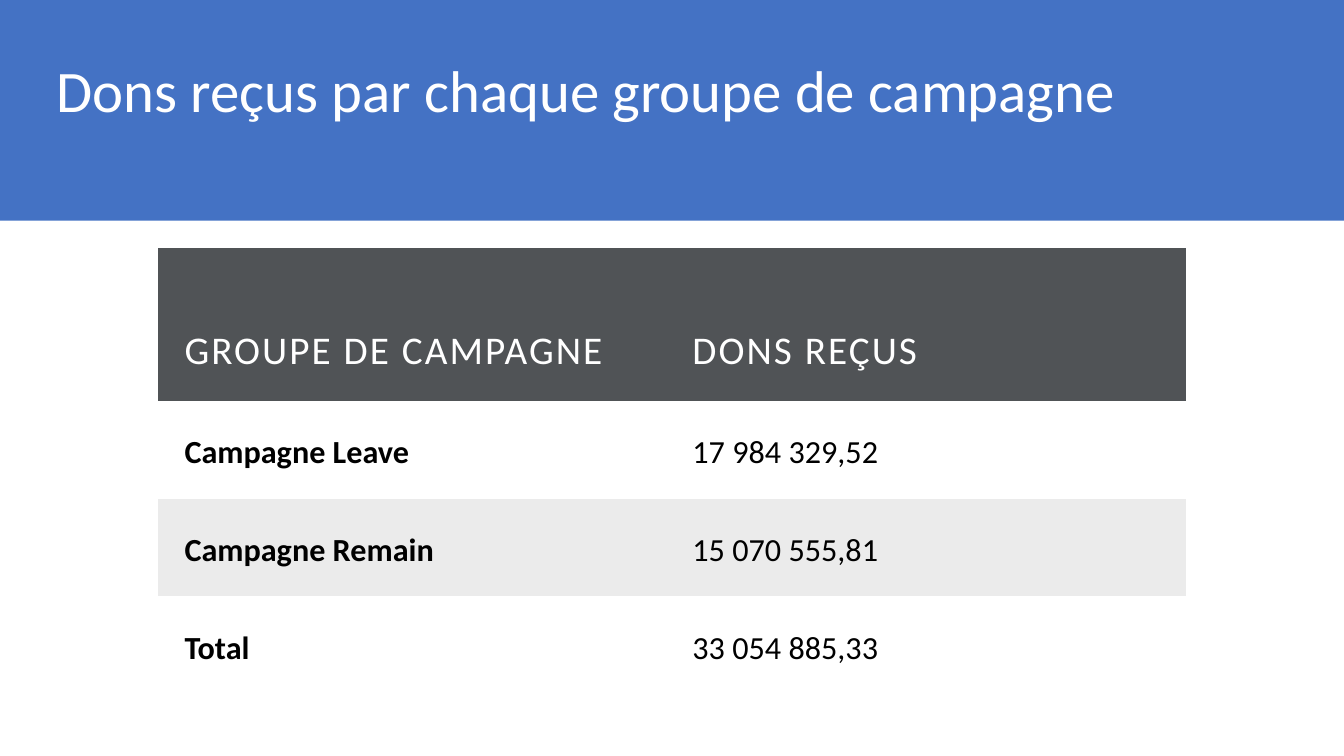
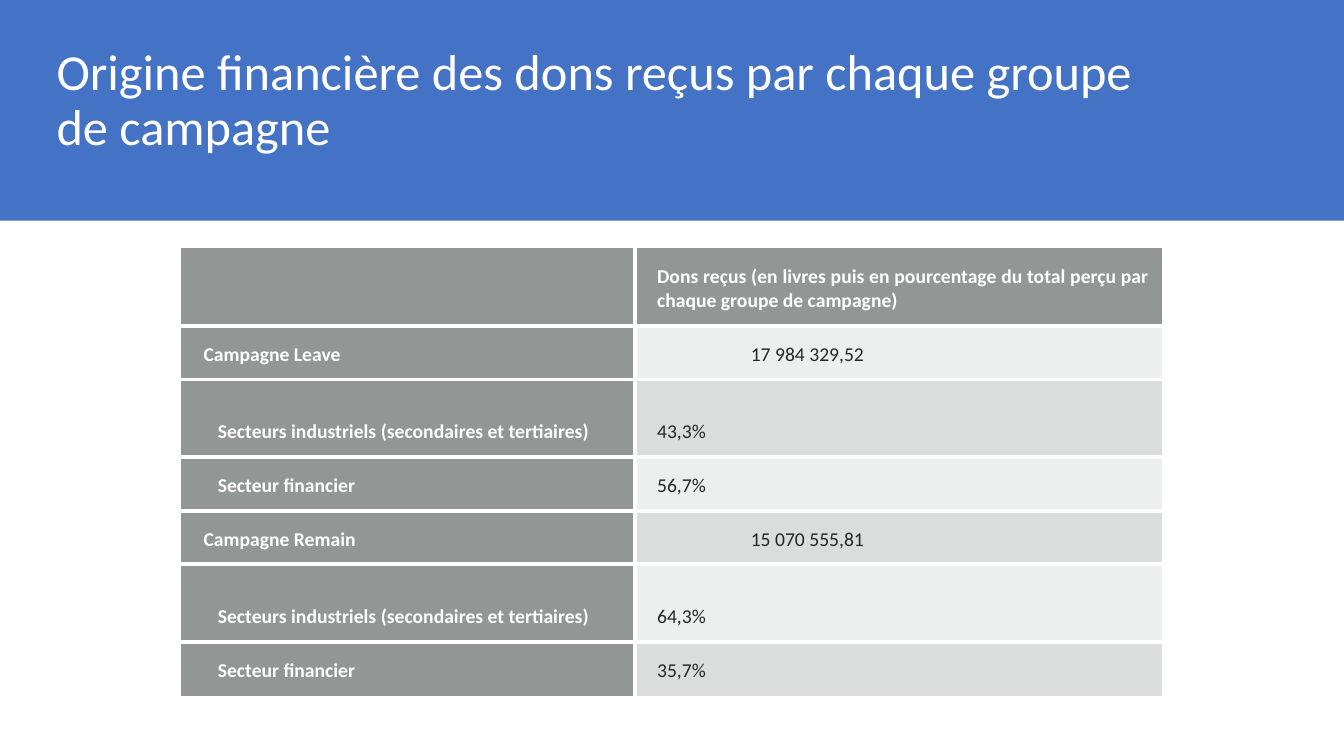
from lxml import etree
from pptx import Presentation
from pptx.dml.color import RGBColor
from pptx.enum.shapes import MSO_SHAPE
from pptx.enum.text import MSO_ANCHOR, MSO_AUTO_SIZE, PP_ALIGN
from pptx.oxml.ns import qn
from pptx.util import Cm, Pt

RECT = MSO_SHAPE.RECTANGLE
BOTTOM = MSO_ANCHOR.BOTTOM
NO_FIT = MSO_AUTO_SIZE.NONE
LEFT, JUSTIFY = PP_ALIGN.LEFT, PP_ALIGN.JUSTIFY

FONT = "Calibri"
BLUE, WHITE, BLACK, INK = "4472C4", "FFFFFF", "000000", "262626"
SLATE, PALE = "505356", "EBEBEB"
GREY, LIGHT, MID = "929795", "EDEEEE", "DBDDDC"
PLAIN_STYLE = "{2D5ABB26-0587-4C30-8999-92F81FD0307C}"

WIDTH, HEIGHT, BAND = 33.87, 19.05, 5.56
TITLE_X, TITLE_W = 1.17, 29.21
TABLE_Y = 6.25

TOTALS = [
    ("GROUPE DE CAMPAGNE", "DONS REÇUS"),
    ("Campagne Leave", "17 984 329,52"),
    ("Campagne Remain", "15 070 555,81"),
    ("Total", "33 054 885,33"),
]
INDUSTRY = "Secteurs industriels (secondaires et tertiaires)"
FINANCE = "Secteur financier"
ORIGINS = [
    ("", "Dons reçus (en livres puis en pourcentage du total perçu par "
         "chaque groupe de campagne)"),
    ("Campagne Leave", "17 984 329,52"),
    (INDUSTRY, "43,3%"),
    (FINANCE, "56,7%"),
    ("Campagne Remain", "15 070 555,81"),
    (INDUSTRY, "64,3%"),
    (FINANCE, "35,7%"),
]


def rgb(code):
    return RGBColor.from_string(code)


def style(font, **values):
    color = values.pop("color")
    for name, value in values.items():
        setattr(font, name, value)
    font.name = FONT
    font.color.rgb = rgb(color)


def add_slide(deck, text, size, top, height):
    """Add a slide with the blue band and its title."""
    slide = deck.slides.add_slide(deck.slide_layouts[5])
    band = slide.shapes.add_shape(RECT, 0, 0, Cm(WIDTH), Cm(BAND))
    band.shadow.inherit = False
    band.fill.solid()
    band.fill.fore_color.rgb = rgb(BLUE)
    band.line.fill.background()

    title = slide.shapes.title
    title.element.addprevious(band.element)
    place = {"left": TITLE_X, "top": top, "width": TITLE_W, "height": height}
    for name, value in place.items():
        setattr(title, name, Cm(value))
    frame = title.text_frame
    frame.text = text
    frame.word_wrap = True
    frame.auto_size = NO_FIT
    frame.vertical_anchor = BOTTOM
    par = frame.paragraphs[0]
    par.alignment = LEFT
    par.line_spacing = 0.9
    style(par.runs[0].font, size=Pt(size), color=WHITE)
    return slide


def add_grid(slide, data, left, cols, rows):
    """Add a table without any style of its own."""
    frame = slide.shapes.add_table(len(rows), len(cols), Cm(left), Cm(TABLE_Y),
                                   Cm(sum(cols)), Cm(sum(rows)))
    frame.element.find(".//" + qn("a:tableStyleId")).text = PLAIN_STYLE
    grid = frame.table
    for col, width in zip(grid.columns, cols):
        col.width = Cm(width)
    for row, height in zip(grid.rows, rows):
        row.height = Cm(height)
    for r, line in enumerate(data):
        for c, text in enumerate(line):
            yield r, c, text, grid.cell(r, c)


def fill_cell(cell, text, back, pads, **font):
    """Write one cell; pads are left, right, top and bottom."""
    sides = ("left", "right", "top", "bottom")
    for side, pad in zip(sides, pads):
        setattr(cell, "margin_" + side, Cm(pad))
    cell.vertical_anchor = BOTTOM
    if back:
        cell.fill.solid()
        cell.fill.fore_color.rgb = rgb(back)
    else:
        cell.fill.background()
    par = cell.text_frame.paragraphs[0]
    par.alignment = JUSTIFY
    run = par.add_run()
    run.text = text
    style(run.font, **font)
    return run


def rule(cell, edges):
    """Draw white lines on the given edges, in the order L, R, T, B."""
    props = cell.text_frame._txBody.getparent().find(qn("a:tcPr"))
    for spot, edge in enumerate(edges):
        line = etree.Element(qn("a:ln" + edge), w=str(Pt(3)))
        fill = etree.SubElement(line, qn("a:solidFill"))
        etree.SubElement(fill, qn("a:srgbClr"), val=WHITE)
        props.insert(spot, line)


def add_totals(deck):
    slide = add_slide(deck, "Dons reçus par chaque groupe de campagne",
                      42, 0.69, 2.59)
    backs = (SLATE, None, PALE, None)
    cells = add_grid(slide, TOTALS, 3.99, (12.8, 13.11), (3.86,) + (2.46,) * 3)
    for r, c, text, cell in cells:
        head = r == 0
        run = fill_cell(cell, text, backs[r], (0.66,) * 4,
                        size=Pt(28 if head else 23),
                        bold=not head and c == 0,
                        color=WHITE if head else BLACK)
        if head:
            run.font._element.set("spc", "150")


def add_origins(deck):
    slide = add_slide(deck, "Origine financière des dons reçus par chaque "
                      "groupe de campagne", 36, 1.01, 3.05)
    tall, low = 1.96, 1.35
    rows = [tall if text in ("", INDUSTRY) else low for text, _ in ORIGINS]
    last = len(rows) - 1
    for r, c, text, cell in add_grid(slide, ORIGINS, 4.57, (11.43, 13.28), rows):
        dark = r == 0 or c == 0
        back = GREY if dark else LIGHT if r % 2 else MID
        left = 0.56
        if text in (INDUSTRY, FINANCE):
            left += 0.36
        elif not dark and "%" not in text:
            left += 2.36
        fill_cell(cell, text, back, (left, 0.33, 0.33, 0.33), size=Pt(14),
                  bold=dark, color=WHITE if dark else INK)
        rule(cell, ("L" if c else "R") + "T" * (r > 0) + "B" * (r < last))


def main():
    deck = Presentation()
    deck.slide_width, deck.slide_height = Cm(WIDTH), Cm(HEIGHT)
    add_totals(deck)
    add_origins(deck)
    deck.save("out.pptx")


if __name__ == "__main__":
    main()
